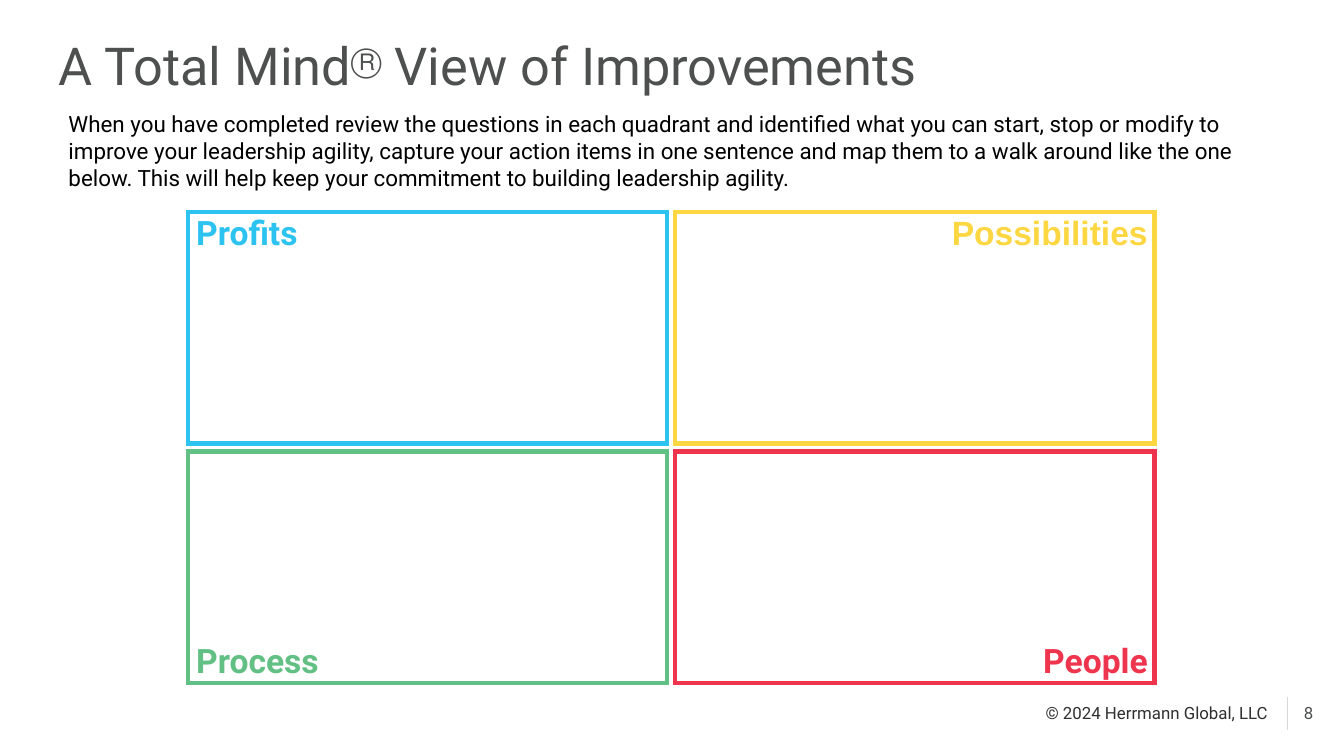
import pptx
import pptx.util
import pptx.dml.color
import pptx.enum.shapes
import pptx.enum.text
import pptx.oxml.ns
import lxml.etree

Inches = pptx.util.Inches
Pt = pptx.util.Pt
ALIGN = pptx.enum.text.PP_ALIGN
ANCHOR = pptx.enum.text.MSO_ANCHOR
qn = pptx.oxml.ns.qn

TITLE = ["A Total Mind", "Ⓡ", " View of Improvements"]
INTRO = (
    "When you have completed review the questions in each quadrant and identified "
    "what you can start, stop or modify to improve your leadership agility, capture "
    "your action items in one sentence and map them to a walk around like the one "
    "below. This will help keep your commitment to building leadership agility."
)
QUADRANTS = [
    ("Profits", "2CC3F0", "Roboto", 1.1),
    ("Possibilities", "FDD742", "Arial", 1.62),
    ("Process", "63C084", "Roboto", 1.24),
    ("People", "EF354E", "Roboto", 1.24),
]


def color(value):
    return pptx.dml.color.RGBColor.from_string(value)


def add_text(s, box, runs, size, fill, font="Roboto", bold=False,
             align=ALIGN.LEFT, anchor=ANCHOR.TOP, inset=(0.07, 0.04)):
    tf = s.shapes.add_textbox(*map(Inches, box)).text_frame
    tf.word_wrap = True
    tf.vertical_anchor = anchor
    tf.margin_left = tf.margin_right = Inches(inset[0])
    tf.margin_top = tf.margin_bottom = Inches(inset[1])
    p = tf.paragraphs[0]
    p.alignment = align
    p.font.name = font
    p.font.size = Pt(size)
    p.font.bold = bold
    p.font.color.rgb = color(fill)
    for text in runs:
        p.add_run().text = text
    return p


def add_header(s, x, y, w):
    p = add_text(s, (x, y, w, 0.63), TITLE, 28, "4E504F", inset=(0.1, 0.1))
    p.runs[1]._r.get_or_add_rPr().set("baseline", "30000")
    add_text(s, (x + 0.14, y + 0.64, w - 0.29, 0.49), [INTRO], 12, "000000",
             inset=(0.03, 0.03))


def add_quadrants(s, x, y, w, h):
    gap = 0.06
    cell_w, cell_h = (w - gap) / 2, (h - gap) / 2
    for i, (name, fill, font, label_w) in enumerate(QUADRANTS):
        row, col = divmod(i, 2)
        left, top = x + col * (cell_w + gap), y + row * (cell_h + gap)
        sp = s.shapes.add_shape(pptx.enum.shapes.MSO_SHAPE.RECTANGLE,
                                *map(Inches, (left, top, cell_w, cell_h)))
        sp.shadow.inherit = False
        sp.fill.background()
        sp.line.color.rgb = color(fill)
        sp.line.width = Pt(2.25)
        lxml.etree.SubElement(sp.line._get_or_add_ln(), qn("a:miter"), lim="800000")
        label_x = x + w + 0.02 - label_w if col else x - 0.01
        label_y, label_h = (y + h - 0.36, 0.29) if row else (y - 0.04, 0.42)
        add_text(s, (label_x, label_y, label_w, label_h), [name], 18, fill, font,
                 bold=True, align=ALIGN.RIGHT if col else ALIGN.LEFT)


def add_footer(s, x, y, h):
    divider_x = Inches(x + 1.87)
    line = s.shapes.add_connector(pptx.enum.shapes.MSO_CONNECTOR.STRAIGHT, divider_x,
                                  Inches(y + 0.1), divider_x, Inches(y + 0.34))
    line.line.color.rgb = color("D8D8D8")
    line.line.width = Pt(1)
    lxml.etree.SubElement(line._element.spPr, qn("a:effectLst"))
    add_text(s, (x, y, 1.87, h), ["© 2024 Herrmann Global, LLC"], 9, "2F302F",
             anchor=ANCHOR.MIDDLE)
    add_text(s, (x + 1.79, y, 0.37, h), ["8"], 9, "4E504F", align=ALIGN.RIGHT,
             anchor=ANCHOR.MIDDLE, inset=(0.1, 0.1))


def main():
    prs = pptx.Presentation()
    prs.slide_width = Inches(10)
    prs.slide_height = prs.slide_width * 9 // 16
    s = prs.slides.add_slide(prs.slide_layouts[6])
    add_header(s, 0.34, 0.15, 9.32)
    add_quadrants(s, 1.4, 1.58, 7.19, 3.5)
    add_footer(s, 7.71, 5.09, 0.43)
    prs.save("out.pptx")


if __name__ == "__main__":
    main()
